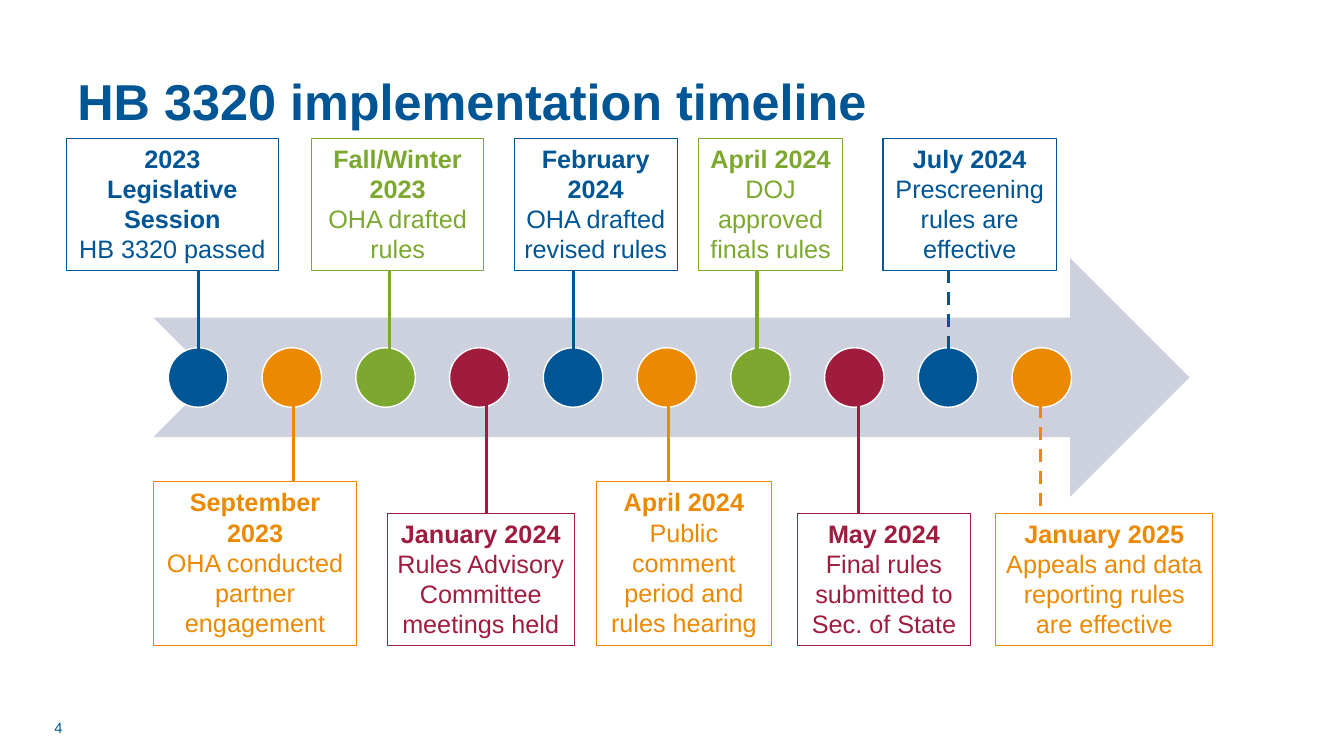
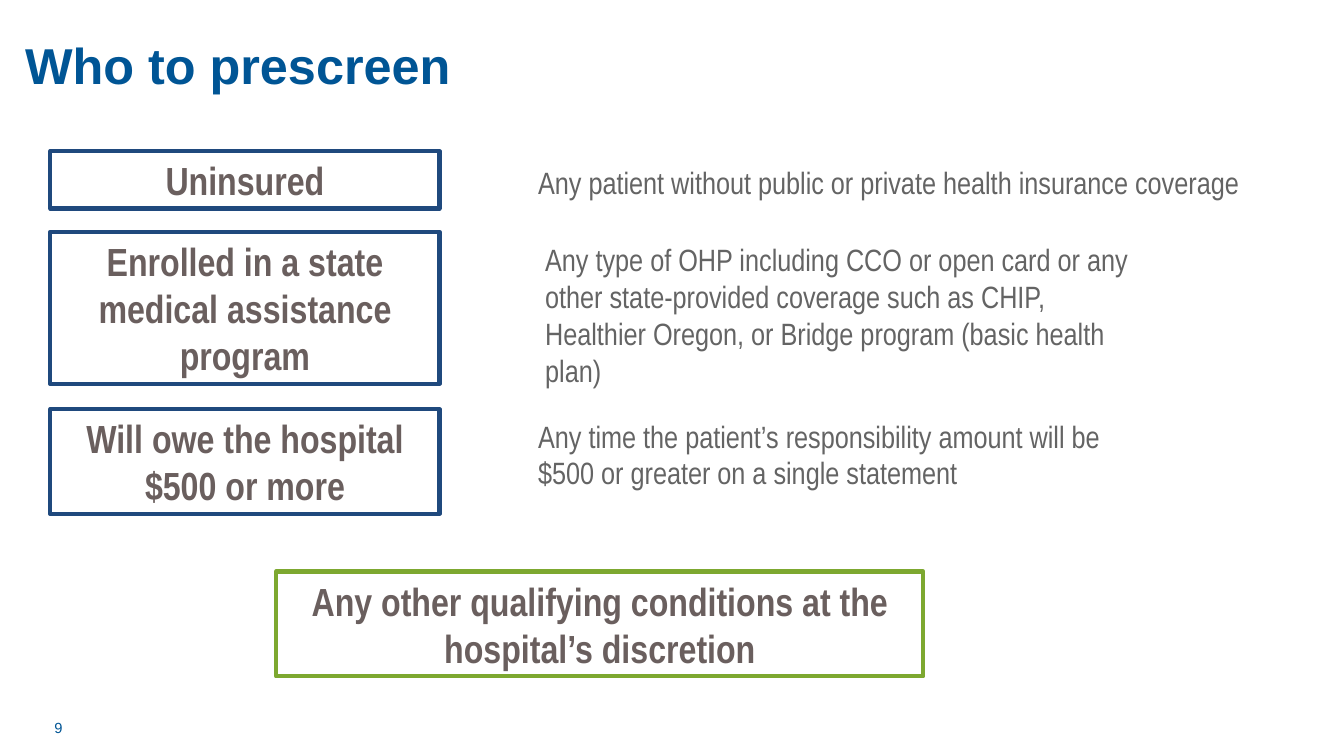
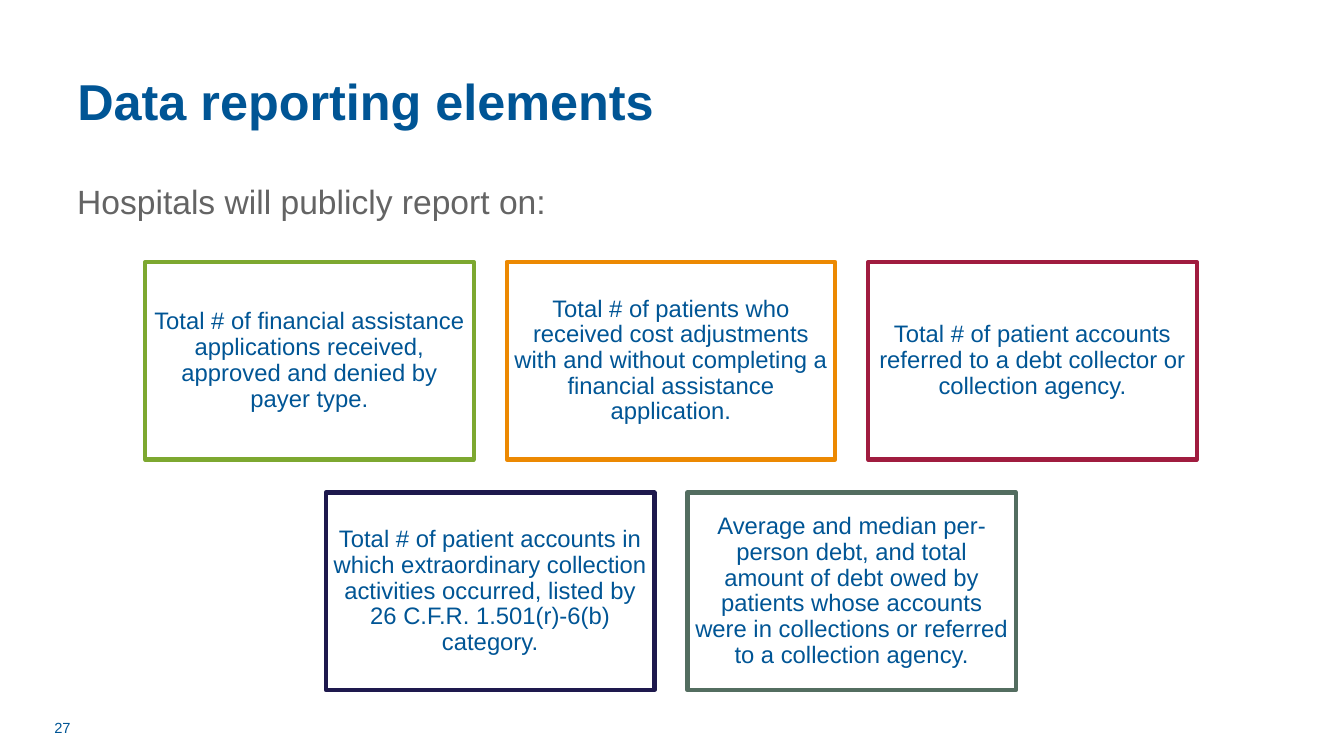
from itertools import cycle

from lxml import etree
from pptx import Presentation
from pptx import util as u
from pptx.dml.color import RGBColor
from pptx.enum import dml, shapes, text
from pptx.oxml.ns import qn

COLS, ROWS = 40, 22.5
WIDTH, HEIGHT = u.Inches(13.333), u.Inches(7.5)
BLUE, ORANGE, GREEN, RED = "005595", "EC8902", "7DA830", "A01C3F"
NAVY, INDIGO, SAGE = "1F497D", "1E194D", "536D60"
GREY, TAUPE, SILVER, WHITE = "646464", "6A5F5E", "CCD1DD", "FFFFFF"
LEFT, CENTER = text.PP_ALIGN.LEFT, text.PP_ALIGN.CENTER
TOP, MIDDLE = text.MSO_ANCHOR.TOP, text.MSO_ANCHOR.MIDDLE
SHAPE = shapes.MSO_SHAPE

MILESTONES = [
    (5.91, 1.98, 6.3, 3.93, "2023 Legislative Session", "HB 3320 passed"),
    (8.73, 4.56, 6.06, 4.86, "September 2023", "OHA conducted partner engagement"),
    (11.58, 9.27, 5.13, 3.93, "Fall/Winter 2023", "OHA drafted rules"),
    (14.49, 11.52, 5.58, 3.93, "January 2024", "Rules Advisory Committee meetings held"),
    (17.07, 15.3, 4.86, 3.93, "February 2024", "OHA drafted revised rules"),
    (19.89, 17.76, 5.19, 4.86, "April 2024", "Public comment period and rules hearing"),
    (22.53, 20.79, 4.29, 3.93, "April 2024", "DOJ approved finals rules"),
    (25.56, 23.73, 5.16, 3.93, "May 2024", "Final rules submitted to Sec. of State"),
    (28.23, 26.28, 5.16, 3.93, "July 2024", "Prescreening rules are effective"),
    (30.96, 29.64, 6.45, 3.93, "January 2025", "Appeals and data reporting rules are effective"),
]
FIRST_DASHED = 8

CRITERIA = [
    (4.5, 1.71, "Uninsured", 15.72, 4.74, 22.26,
     "Any patient without public or private health insurance coverage"),
    (6.9, 4.53, "Enrolled in a state medical assistance program", 15.93, 7.02, 18.42,
     "Any type of OHP including CCO or open card or any other state-provided coverage "
     "such as CHIP, Healthier Oregon, or Bridge program (basic health plan)"),
    (12.18, 3.12, "Will owe the hospital $500 or more", 15.72, 12.27, 18.42,
     "Any time the patient’s responsibility amount will be $500 or greater on a single statement"),
]

REPORT_ROWS = [
    [(GREEN, "Total # of financial assistance applications received, approved and denied by payer type."),
     (ORANGE, "Total # of patients who received cost adjustments with and without completing "
              "a financial assistance application."),
     (RED, "Total # of patient accounts referred to a debt collector or collection agency.")],
    [(INDIGO, "Total # of patient accounts in which extraordinary collection activities occurred, "
              "listed by 26 C.F.R. 1.501(r)-6(b) category."),
     (SAGE, "Average and median per-person debt, and total amount of debt owed by patients "
            "whose accounts were in collections or referred to a collection agency.")],
]


def rgb(code):
    return RGBColor.from_string(code)


def grid(x, y, w, h):
    return [u.Emu(round(v)) for v in (x * WIDTH / COLS, y * HEIGHT / ROWS,
                                      w * WIDTH / COLS, h * HEIGHT / ROWS)]


def write(sp, *lines, size=18, color=BLUE, font="Arial", bold=(False,), align=LEFT,
          anchor=TOP, spacing=None, around=None, inset=None):
    tf = sp.text_frame
    tf.word_wrap = True
    tf.auto_size = text.MSO_AUTO_SIZE.NONE
    tf.vertical_anchor = anchor
    if inset is not None:
        tf.margin_left = tf.margin_right = tf.margin_top = tf.margin_bottom = u.Inches(inset)
    for i, (line, strong) in enumerate(zip(lines, cycle(bold))):
        p = tf.add_paragraph() if i else tf.paragraphs[0]
        p.alignment = align
        if spacing:
            p.line_spacing = spacing
        if around:
            p.space_before = p.space_after = u.Pt(around)
        r = p.add_run()
        r.text = line
        r.font.name, r.font.size, r.font.bold = font, u.Pt(size), strong
        r.font.color.rgb = rgb(color)


def label(s, area, line, **fmt):
    write(s.shapes.add_textbox(*grid(*area)), line, **fmt)


def figure(s, kind, area, fill=None, line=None, weight=1):
    sp = s.shapes.add_shape(kind, *grid(*area))
    sp.shadow.inherit = False
    if fill:
        sp.fill.solid()
        sp.fill.fore_color.rgb = rgb(fill)
    else:
        sp.fill.background()
    if line:
        sp.line.color.rgb = rgb(line)
        sp.line.width = u.Pt(weight)
    else:
        sp.line.fill.background()
    return sp


def stem(s, x, top, bottom, color, dashed):
    left, y1, _, drop = grid(x, top, 0, bottom - top)
    line = s.shapes.add_connector(shapes.MSO_CONNECTOR.STRAIGHT, left, y1, left, y1 + drop)
    line.line.color.rgb = rgb(color)
    line.line.width = u.Pt(2.25)
    if dashed:
        line.line.dash_style = dml.MSO_LINE.DASH
    etree.SubElement(line._element.spPr, qn("a:effectLst"))


def condition(s, area, line, color):
    sp = figure(s, SHAPE.RECTANGLE, area, WHITE, color, 3)
    write(sp, line, size=28, color=TAUPE, font="Arial Narrow", bold=(True,),
          align=CENTER, anchor=MIDDLE, around=6)


def titled_slide(prs, title, number, x=2, y=1.23):
    s = prs.slides.add_slide(prs.slide_layouts[5])
    sp = s.shapes.title
    sp.left, sp.top, sp.width, sp.height = grid(x, y, 36, 3.75)
    write(sp, title, size=36, bold=(True,), anchor=MIDDLE, spacing=0.9)
    label(s, (1.32, 21.24, 9.33, 0.81), number, size=10.5, anchor=MIDDLE)
    return s


def timeline_slide(prs):
    s = titled_slide(prs, "HB 3320 implementation timeline", "4")
    palette = [BLUE, ORANGE, GREEN, RED]
    colors = [palette[i % len(palette)] for i in range(len(MILESTONES))]
    figure(s, SHAPE.NOTCHED_RIGHT_ARROW, (4.56, 7.68, 30.84, 7.11), SILVER)
    for i, color in enumerate(colors):
        figure(s, SHAPE.OVAL, (5.01 + 2.79 * i, 10.35, 1.77, 1.77), color, WHITE)
    for i, (color, milestone) in enumerate(zip(colors, MILESTONES)):
        x, left, width, height, date, event = milestone
        above = i % 2 == 0
        top = 4.11 if above else 19.2 - height
        sp = figure(s, SHAPE.RECTANGLE, (left, top, width, height), line=color, weight=0.75)
        write(sp, date, event, color=color, bold=(True, False), align=CENTER)
        ends = (top + height, 10.44) if above else (12.06, top)
        stem(s, x, *ends, color, i >= FIRST_DASHED)


def prescreen_slide(prs):
    s = titled_slide(prs, "Who to prescreen", "9", 0.45, 0.15)
    for top, height, name, x, y, width, detail in CRITERIA:
        condition(s, (1.5, top, 11.58, height), name, NAVY)
        label(s, (x, y, width, height), detail, size=22, color=GREY, font="Arial Narrow")
    condition(s, (8.22, 17.01, 19.26, 3.12),
              "Any other qualifying conditions at the hospital’s discretion", GREEN)


def reporting_slide(prs):
    s = titled_slide(prs, "Data reporting elements", "27")
    label(s, (2, 5.25, 36, 1.65), "Hospitals will publicly report on:", size=24, color=GREY)
    width, height, gap = 9.78, 5.88, 0.98
    widest = max(len(row) for row in REPORT_ROWS)
    for j, row in enumerate(REPORT_ROWS):
        indent = (widest - len(row)) * (width + gap) / 2
        for i, (color, line) in enumerate(row):
            area = (4.32 + indent + i * (width + gap), 7.8 + j * (height + gap), width, height)
            sp = figure(s, SHAPE.RECTANGLE, area, line=color, weight=3)
            write(sp, line, size=17, align=CENTER, anchor=MIDDLE, spacing=0.9, inset=0.07)


def main():
    prs = Presentation()
    prs.slide_width, prs.slide_height = WIDTH, HEIGHT
    timeline_slide(prs)
    prescreen_slide(prs)
    reporting_slide(prs)
    prs.save("out.pptx")


if __name__ == "__main__":
    main()
